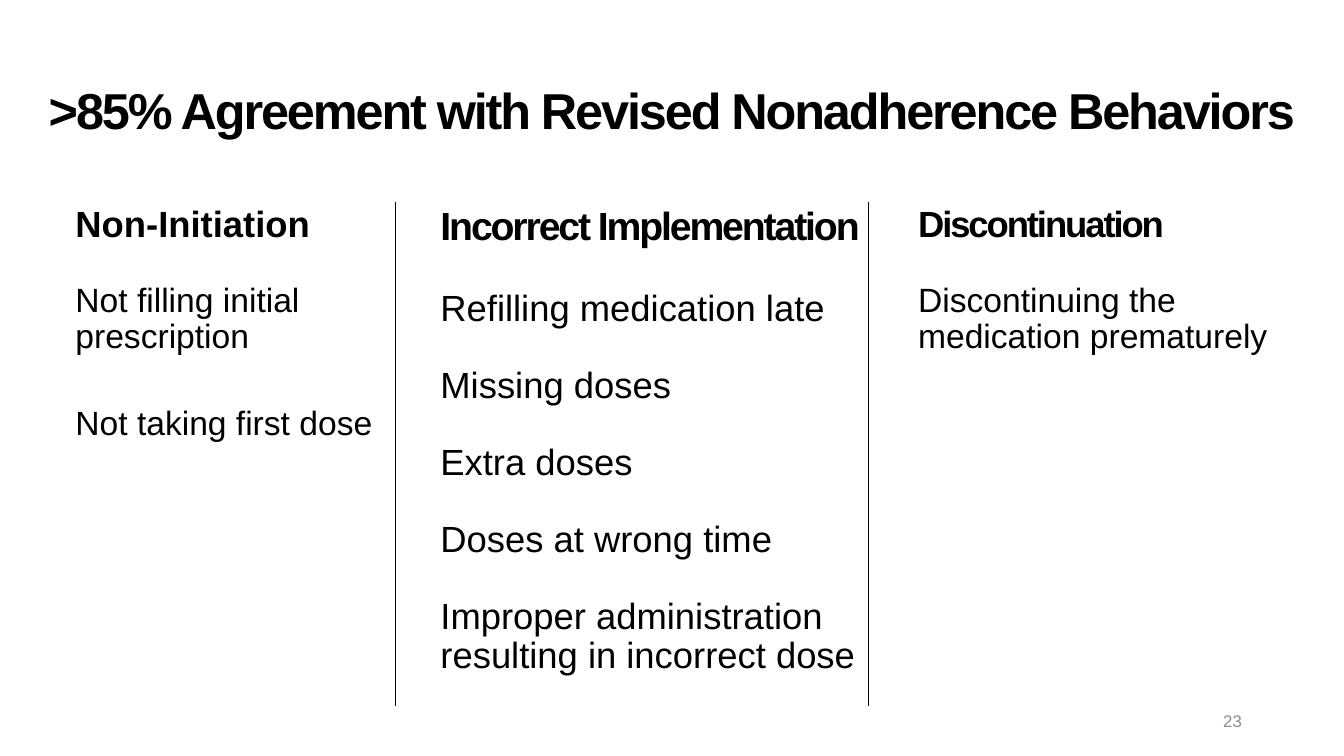
from lxml.etree import SubElement
from pptx import Presentation
from pptx.dml.color import RGBColor
from pptx.enum.shapes import MSO_CONNECTOR
from pptx.enum.text import MSO_ANCHOR, MSO_AUTO_SIZE, PP_ALIGN
from pptx.oxml.ns import qn
from pptx.util import Pt

FONT = "Arial"
COLORS = {"text": "000000", "divider": "000000", "number": "8C8C8C"}
TITLE = ">85% Agreement with Revised Nonadherence Behaviors"
SLIDE_NUMBER = "23"
TIGHT = -1.5
LINE_SPACING = 0.9
COLUMN_TOP, COLUMN_HEIGHT = 144, 342.5
DIVIDER_BOTTOM = 504.5
DIVIDERS = [282.7, 620.6]

COLUMNS = [
    {"left": 46.8, "width": 234, "heading": "Non-Initiation", "heading_size": 26,
     "tracking": 0, "size": 24, "first_gap": 27, "gap": 36,
     "items": ["Not filling initial prescription", "Not taking first dose"]},
    {"left": 307.4, "width": 330.5, "heading": "Incorrect Implementation", "heading_size": 28,
     "tracking": TIGHT, "size": 26, "first_gap": 29, "gap": 27, "placeholder": True,
     "items": ["Refilling medication late", "Missing doses", "Extra doses",
               "Doses at wrong time", "Improper administration resulting in incorrect dose"]},
    {"left": 648.7, "width": 265, "heading": "Discontinuation", "heading_size": 26,
     "tracking": TIGHT, "size": 24, "first_gap": 27, "gap": 36,
     "items": ["Discontinuing the medication prematurely"]},
]


def place(shape, left, top, width, height, anchor):
    shape.left, shape.top, shape.width, shape.height = map(Pt, (left, top, width, height))
    frame = shape.text_frame
    frame.word_wrap = True
    frame.auto_size = MSO_AUTO_SIZE.NONE
    frame.vertical_anchor = anchor
    return frame


def add_text(paragraph, text, size, color="text", bold=False, tracking=0):
    run = paragraph.add_run()
    run.text = text
    run.font.name = FONT
    run.font.size = Pt(size)
    run.font.bold = bold
    run.font.color.rgb = RGBColor.from_string(COLORS[color])
    if tracking:
        run.font._element.set("spc", str(int(tracking * 100)))


def add_column(slide, column):
    if column.get("placeholder"):
        shape = slide.placeholders[1]
    else:
        shape = slide.shapes.add_textbox(0, 0, 0, 0)
    frame = place(shape, column["left"], COLUMN_TOP, column["width"], COLUMN_HEIGHT,
                  MSO_ANCHOR.TOP)
    for index, text in enumerate([column["heading"], *column["items"]]):
        paragraph = frame.add_paragraph() if index else frame.paragraphs[0]
        paragraph.line_spacing = LINE_SPACING
        paragraph.space_before = Pt((10, column["first_gap"])[index] if index < 2
                                    else column["gap"])
        properties = paragraph._p.get_or_add_pPr()
        properties.set("marL", "0")
        properties.set("indent", "0")
        SubElement(properties, qn("a:buNone"))
        if index:
            add_text(paragraph, text, column["size"])
        else:
            add_text(paragraph, text, column["heading_size"], bold=True,
                     tracking=column["tracking"])


def add_divider(slide, x):
    line = slide.shapes.add_connector(MSO_CONNECTOR.STRAIGHT, Pt(x), Pt(COLUMN_TOP),
                                      Pt(x), Pt(DIVIDER_BOTTOM))
    line.line.color.rgb = RGBColor.from_string(COLORS["divider"])
    line.line.width = Pt(0.5)
    SubElement(line._element.spPr, qn("a:effectLst"))


def main():
    presentation = Presentation()
    presentation.slide_width, presentation.slide_height = Pt(960), Pt(540)
    slide = presentation.slides.add_slide(presentation.slide_layouts[1])

    title = place(slide.shapes.title, 0, 28.8, 960, 104.4, MSO_ANCHOR.MIDDLE).paragraphs[0]
    title.alignment = PP_ALIGN.CENTER
    title.line_spacing = LINE_SPACING
    add_text(title, TITLE, 36, bold=True, tracking=TIGHT)

    for column in COLUMNS:
        add_column(slide, column)
    for x in DIVIDERS:
        add_divider(slide, x)

    number_box = slide.shapes.add_textbox(0, 0, 0, 0)
    number = place(number_box, 678.2, 500.4, 216, 28.8, MSO_ANCHOR.MIDDLE).paragraphs[0]
    number.alignment = PP_ALIGN.RIGHT
    add_text(number, SLIDE_NUMBER, 12, "number")

    presentation.save("out.pptx")


if __name__ == "__main__":
    main()
